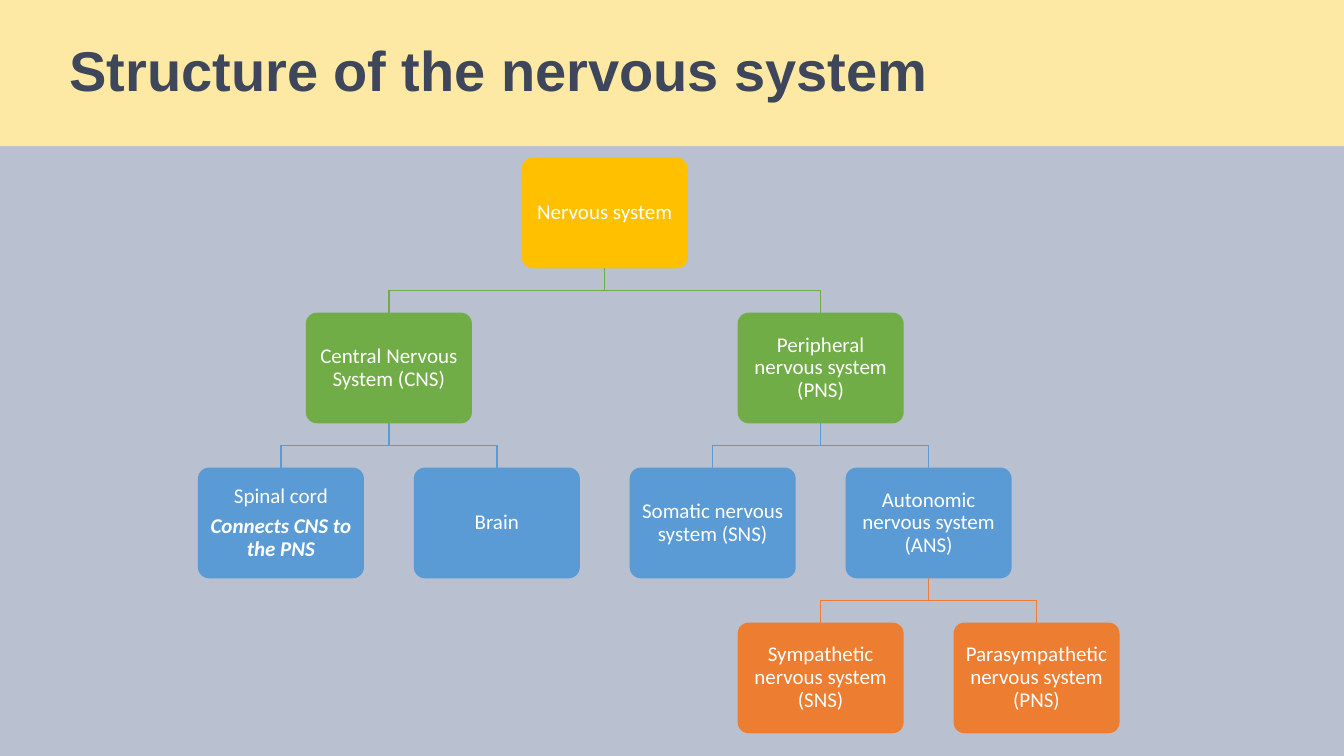
"""Build a slide with a tree of the parts of the nervous system."""
from dataclasses import dataclass

from pptx import Presentation
from pptx.dml.color import RGBColor
from pptx.enum.shapes import MSO_SHAPE
from pptx.enum.text import MSO_ANCHOR, PP_ALIGN
from pptx.shapes.autoshape import Shape
from pptx.slide import Slide
from pptx.util import Pt

RECT = MSO_SHAPE.RECTANGLE
ROUNDED = MSO_SHAPE.ROUNDED_RECTANGLE
MIDDLE = MSO_ANCHOR.MIDDLE
LEFT, CENTER = PP_ALIGN.LEFT, PP_ALIGN.CENTER

BACKGROUND = RGBColor(0xB9, 0xC0, 0xCF)
BANNER = RGBColor(0xFE, 0xE9, 0xA4)
NAVY = RGBColor(0x3D, 0x46, 0x5A)
WHITE = RGBColor(0xFF, 0xFF, 0xFF)
GOLD = RGBColor(0xFF, 0xC0, 0x00)
GREEN = RGBColor(0x70, 0xAD, 0x47)
BLUE = RGBColor(0x5B, 0x9B, 0xD5)
ORANGE = RGBColor(0xED, 0x7D, 0x31)
LEVEL_COLORS = (GOLD, GREEN, BLUE, ORANGE)

SLIDE_W, SLIDE_H = 960, 540
BANNER_H = 104.4
BOX_W, BOX_H = 118.6, 79.1
ROOT_X, ROOT_TOP = 432, 112.6
COLUMN_STEP, ROW_STEP = 77.1, 110.7


@dataclass(frozen=True)
class Node:
    name: str
    column: int
    children: tuple["Node", ...] = ()
    note: str = ""

    @property
    def x(self) -> float:
        return ROOT_X + self.column * COLUMN_STEP


TREE = Node("Nervous system", 0, (
    Node("Central Nervous System (CNS)", -2, (
        Node("Spinal cord", -3, note="Connects CNS to the PNS"),
        Node("Brain", -1),
    )),
    Node("Peripheral nervous system (PNS)", 2, (
        Node("Somatic nervous system (SNS)", 1),
        Node("Autonomic nervous system (ANS)", 3, (
            Node("Sympathetic nervous system (SNS)", 2),
            Node("Parasympathetic nervous system (PNS)", 4),
        )),
    )),
))


def add_block(s: Slide, kind: MSO_SHAPE, left: float, top: float, width: float,
              height: float, color: RGBColor) -> Shape:
    sp = s.shapes.add_shape(kind, Pt(left), Pt(top), Pt(width), Pt(height))
    sp.shadow.inherit = False
    sp.fill.solid()
    sp.fill.fore_color.rgb = color
    sp.line.fill.background()
    sp.text_frame.word_wrap = True
    sp.text_frame.vertical_anchor = MIDDLE
    return sp


def add_title(s: Slide) -> None:
    sp = add_block(s, RECT, 0, 0, SLIDE_W, BANNER_H, BANNER)
    sp.text_frame.margin_left = Pt(49.7)
    p = sp.text_frame.paragraphs[0]
    p.text = "Structure of the nervous system"
    p.alignment = LEFT
    p.line_spacing = 0.9
    p.font.name, p.font.size, p.font.bold = "Arial", Pt(40), True
    p.font.color.rgb = NAVY


def add_box(s: Slide, node: Node, level: int) -> None:
    top = ROOT_TOP + level * ROW_STEP
    sp = add_block(s, ROUNDED, node.x - BOX_W / 2, top, BOX_W, BOX_H, LEVEL_COLORS[level])
    sp.adjustments[0] = 0.1
    tf = sp.text_frame
    tf.margin_left = tf.margin_right = tf.margin_top = tf.margin_bottom = Pt(4.3)
    tf.text = node.name
    if node.note:
        p = tf.add_paragraph()
        p.text = node.note
        p.font.bold = p.font.italic = True
    for p in tf.paragraphs:
        p.alignment = CENTER
        p.line_spacing = 0.9
        p.space_after = Pt(5.25)
        p.font.name, p.font.size = "Calibri", Pt(15)
        p.font.color.rgb = WHITE


def add_branch(s: Slide, parent: Node, child: Node, level: int) -> None:
    end = ROOT_TOP + level * ROW_STEP
    start = end - ROW_STEP + BOX_H
    middle = (start + end) / 2
    builder = s.shapes.build_freeform(Pt(parent.x), Pt(start))
    corners = ((parent.x, middle), (child.x, middle), (child.x, end))
    builder.add_line_segments([(Pt(x), Pt(y)) for x, y in corners], close=False)
    sp = builder.convert_to_shape()
    sp.shadow.inherit = False
    sp.fill.background()
    sp.line.color.rgb = LEVEL_COLORS[level]
    sp.line.width = Pt(1)


def add_tree(s: Slide, node: Node, level: int = 0) -> None:
    add_box(s, node, level)
    for child in node.children:
        add_branch(s, node, child, level + 1)
        add_tree(s, child, level + 1)


def main() -> None:
    prs = Presentation()
    prs.slide_width, prs.slide_height = Pt(SLIDE_W), Pt(SLIDE_H)
    s = prs.slides.add_slide(prs.slide_layouts[6])
    s.background.fill.solid()
    s.background.fill.fore_color.rgb = BACKGROUND
    add_title(s)
    add_tree(s, TREE)
    prs.save("out.pptx")


if __name__ == "__main__":
    main()
